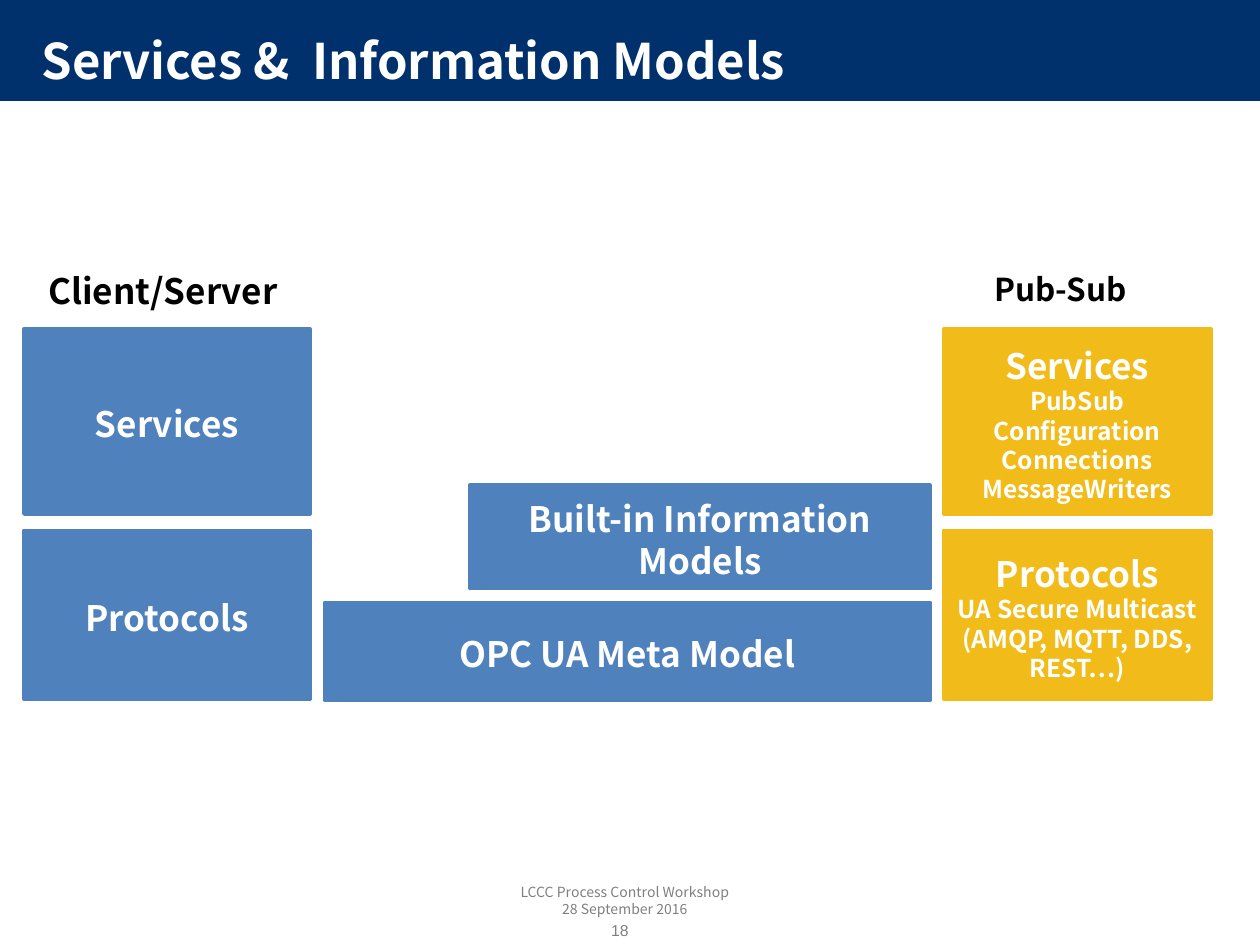
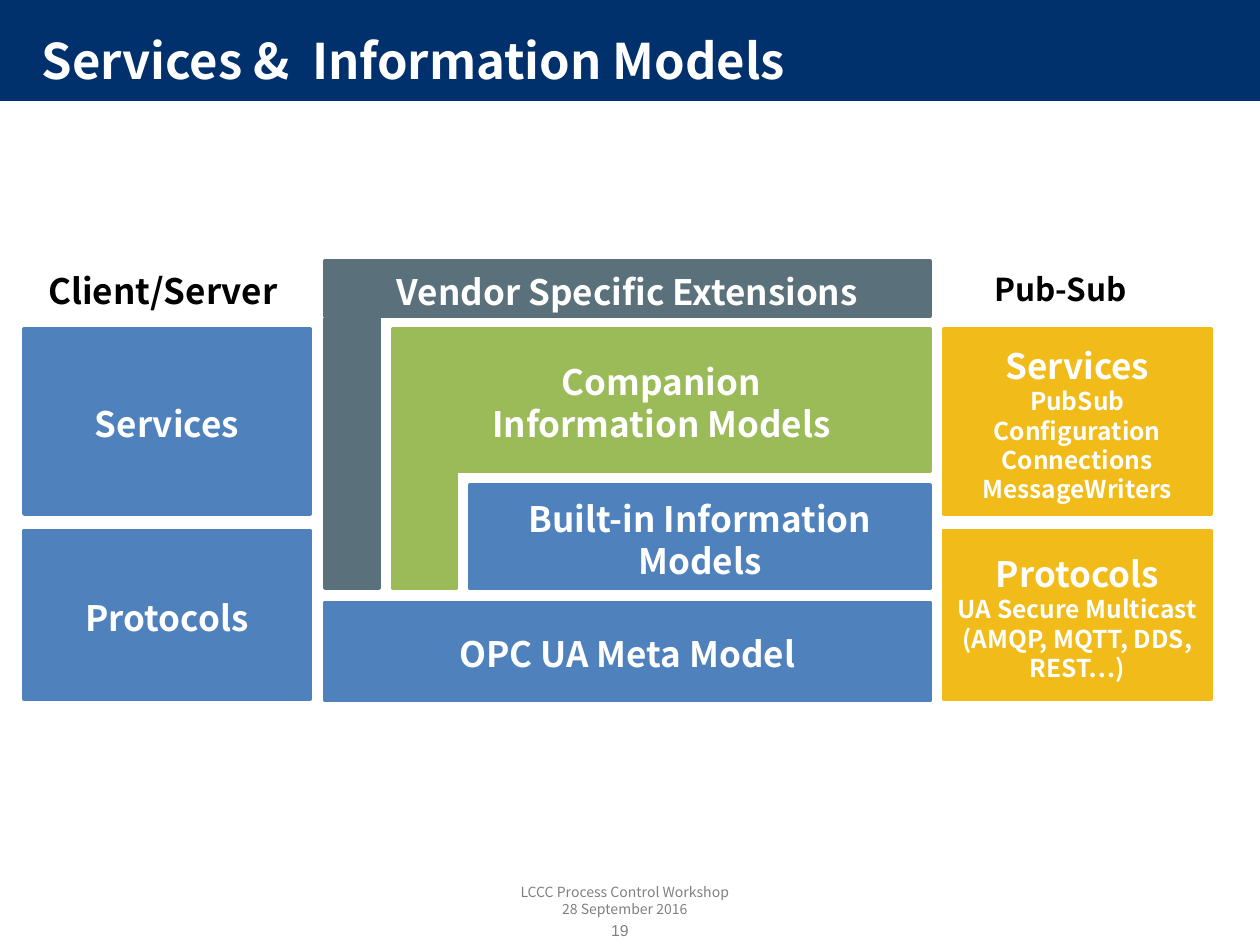
import pptx
import pptx.util
import pptx.dml.color
import pptx.enum.shapes
import pptx.enum.text
import lxml.etree
import pptx.oxml.ns

Inches, Pt = pptx.util.Inches, pptx.util.Pt
ALIGN = pptx.enum.text.PP_ALIGN
ANCHOR = pptx.enum.text.MSO_ANCHOR

# Content
TITLE = "Services &  Information Models"
FOOTER = ["LCCC Process Control Workshop", "28 September 2016"]
COLORS = {"navy": "00316C", "blue": "4F81BD", "yellow": "F1BC1A", "green": "9BBB59",
          "slate": "5A707B", "gray": "808080", "white": "FFFFFF", "black": "000000"}
FONT = "Noto Sans CJK JP"

# Column edges and rows of the diagram
LEFT, MID, RIGHT = 0.19, 2.58, 7.49
LEFT_W, MID_W, RIGHT_W = 2.27, 4.8, 2.12
MID_END = MID + MID_W
HEAD_Y, SERVICE_Y, PROTOCOL_Y = 2.07, 2.61, 4.21
HEAD_H, SERVICE_H, PROTOCOL_H = 0.54, 1.47, 1.34
COMPANION_X, BUILTIN_X = 3.12, 3.73
BUILTIN_Y, STEP_END = 3.85, 4.67

# Blocks: left, top, width, height, colour, lines as (text, size)
MODELS = [
    (MID, 4.78, MID_W, 0.78, "blue", [("OPC UA Meta Model", 20)]),
    (BUILTIN_X, BUILTIN_Y, MID_END - BUILTIN_X, STEP_END - BUILTIN_Y, "blue",
     [("Built-in Information Models", 20)]),
]
EXTENSIONS = [
    (COMPANION_X, SERVICE_Y, MID_END - COMPANION_X, 1.13, "green",
     [("Companion", 20), ("Information Models", 20)]),
    (COMPANION_X, 3.75, 0.5, STEP_END - 3.75, "green", []),
    (MID, HEAD_Y, MID_W, 0.44, "slate", [("Vendor Specific Extensions", 20)]),
    (MID, 2.53, 0.43, STEP_END - 2.53, "slate", []),
]
SIDES = [
    (LEFT, HEAD_Y, LEFT_W, HEAD_H, "white", [("Client/Server ", 20)]),
    (LEFT, SERVICE_Y, LEFT_W, SERVICE_H, "blue", [("Services", 20)]),
    (LEFT, PROTOCOL_Y, LEFT_W, PROTOCOL_H, "blue", [("Protocols", 20)]),
    (RIGHT, HEAD_Y, 1.85, HEAD_H, "white", [("Pub-Sub", 18)]),
    (RIGHT, SERVICE_Y, RIGHT_W, SERVICE_H, "yellow",
     [("Services", 20), ("PubSub\nConfiguration", 14), ("Connections", 14),
      ("MessageWriters", 14)]),
    (RIGHT, PROTOCOL_Y, RIGHT_W, PROTOCOL_H, "yellow",
     [("Protocols", 20), ("UA Secure Multicast", 14), ("(AMQP, MQTT, DDS, REST…)", 14)]),
]
SLIDES = [("18", MODELS + SIDES), ("19", MODELS + EXTENSIONS + SIDES)]


def rgb(name):
    return pptx.dml.color.RGBColor.from_string(COLORS[name])


def write(sp, lines, color, align=ALIGN.CENTER, anchor=ANCHOR.MIDDLE, bold=True,
          font=FONT, insets=(0, 0.07, 0, 0.03), wrap=True):
    tf = sp.text_frame
    tf.word_wrap = wrap
    tf.vertical_anchor = anchor
    tf.margin_left, tf.margin_top, tf.margin_right, tf.margin_bottom = map(Inches, insets)
    for i, (text, size) in enumerate(lines):
        p = tf.paragraphs[0] if i == 0 else tf.add_paragraph()
        p.alignment = align
        p.line_spacing = Pt(size * 1.2)
        for j, part in enumerate(text.split("\n")):
            if j:
                p.add_line_break()
            r = p.add_run()
            r.text = part
            r.font.name, r.font.size, r.font.bold = font, Pt(size), bold
            r.font.color.rgb = rgb(color)


def add_text(s, box, lines, color, **style):
    write(s.shapes.add_textbox(*map(Inches, box)), lines, color, **style)


def add_block(s, left, top, width, height, color, lines=(), outline=True):
    sp = s.shapes.add_shape(pptx.enum.shapes.MSO_SHAPE.RECTANGLE,
                            *map(Inches, (left, top, width, height)))
    sp.shadow.inherit = False
    sp.fill.solid()
    sp.fill.fore_color.rgb = rgb(color)
    heading = color == "white"
    if outline and not heading:
        sp.line.color.rgb = rgb(color)
        sp.line.width = Pt(2)
    else:
        sp.line.fill.background()
    if lines:
        write(sp, lines, "black" if heading else "white",
              anchor=ANCHOR.TOP if heading else ANCHOR.MIDDLE)


def add_frame(s, number):
    # Footer and page number
    add_text(s, (2.4, 7.01, 5.12, 0.27), [(line, 8) for line in FOOTER], "gray",
             bold=False, insets=(0, 0, 0, 0))
    add_text(s, (4.85, 7.32, 0.28, 0.12), [(number, 9)], "gray", align=ALIGN.LEFT,
             bold=False, font="Arial", insets=(0, 0, 0, 0), wrap=False)
    # Title band
    add_block(s, 0, 0, 10, 0.81, "navy", outline=False)
    rule = s.shapes.add_connector(pptx.enum.shapes.MSO_CONNECTOR.STRAIGHT,
                                  *map(Inches, (0, 0.81, 10, 0.81)))
    rule.line.color.rgb = rgb("white")
    rule.line.width = Pt(0.75)
    lxml.etree.SubElement(rule._element.spPr, pptx.oxml.ns.qn("a:effectLst"))
    add_text(s, (0.33, 0.16, 7.84, 0.53), [(TITLE, 28)], "white", align=ALIGN.LEFT,
             anchor=ANCHOR.TOP, insets=(0, 0.08, 0.1, 0.02))


def main():
    prs = pptx.Presentation()
    prs.slide_width, prs.slide_height = Inches(10), Inches(7.5)
    for number, blocks in SLIDES:
        s = prs.slides.add_slide(prs.slide_layouts[6])
        add_frame(s, number)
        for block in blocks:
            add_block(s, *block)
    prs.save("out.pptx")


if __name__ == "__main__":
    main()
